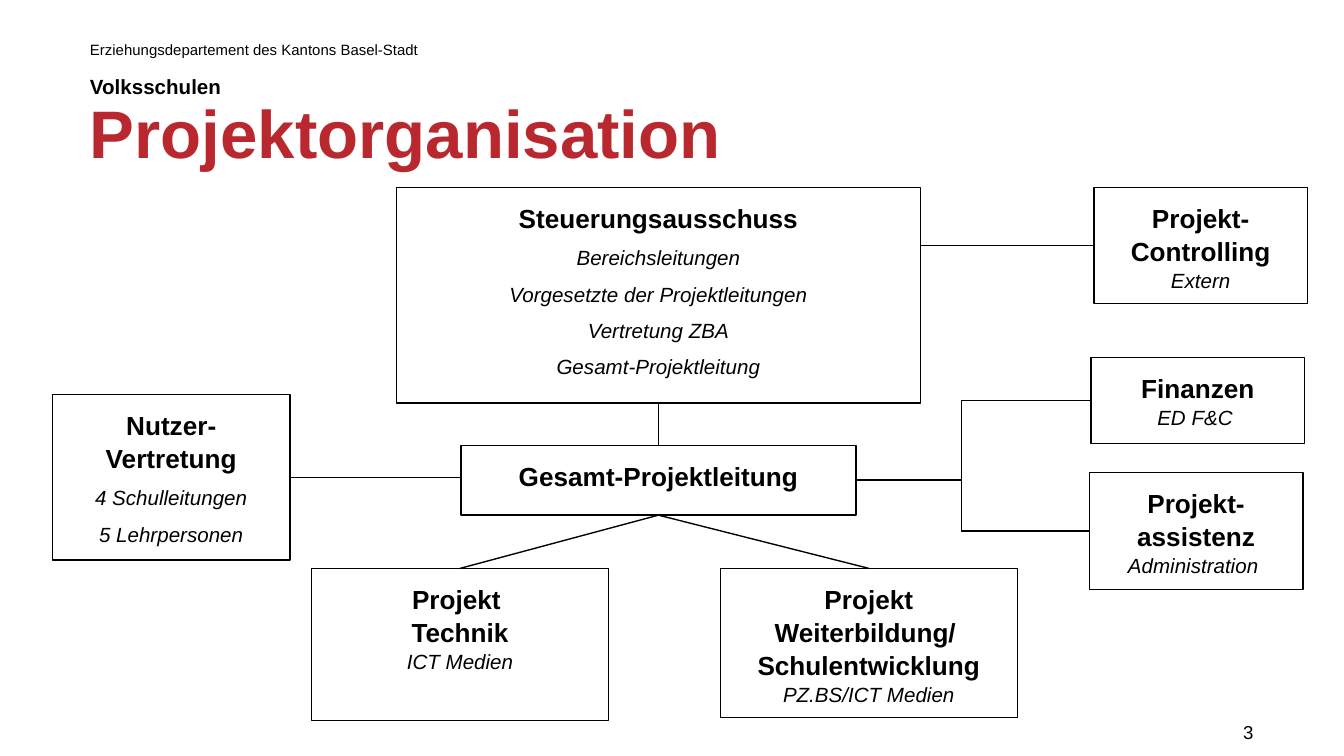
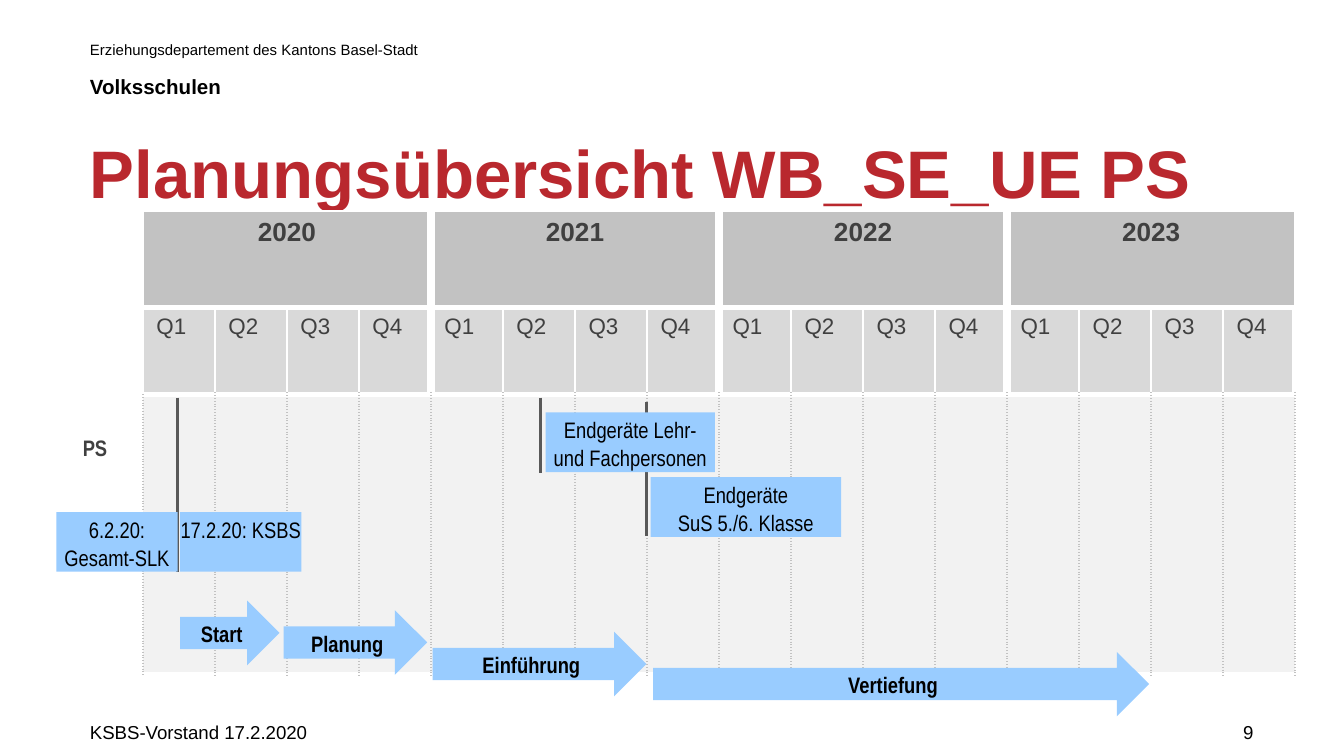
from copy import deepcopy

from lxml import etree
from pptx import Presentation
from pptx.dml.color import RGBColor
from pptx.enum import shapes, text
from pptx.oxml import ns
from pptx.util import Pt

COLORS = {
    "ink": "000000", "title": "B9282E", "bar": "99CCFF", "marker": "595959",
    "year": "C2C2C2", "quarter": "D9D9D9", "body": "F2F2F2",
    "table_ink": "404040", "white": "FFFFFF",
}
TOP, LEFT, BOTTOM, RIGHT = 0, 1, 2, 3
CENTER = text.PP_ALIGN.CENTER
RECT = shapes.MSO_SHAPE.RECTANGLE

HEAD = {"size": 14, "bold": True}
NOTE = {"size": 11, "italic": True}
BAR = {"size": 12, "name": "Arial Narrow"}


def rgb(key):
    return RGBColor.from_string(COLORS[key])


def style_run(run, fmt):
    values = {"name": "Arial", "bold": False, "italic": False, "color": "ink", **fmt}
    run.font.color.rgb = rgb(values.pop("color"))
    values["size"] = Pt(values["size"])
    for attribute, value in values.items():
        setattr(run.font, attribute, value)


def write(frame, paragraphs, **layout):
    """Fill a frame; each paragraph is a list of (text, format) runs."""
    for i, runs in enumerate(paragraphs):
        paragraph = frame.paragraphs[0] if i == 0 else frame.add_paragraph()
        for attribute, value in layout.items():
            if i or attribute != "space_before":
                setattr(paragraph, attribute, value)
        for content, fmt in runs:
            for n, line in enumerate(content.split("\n")):
                if n:
                    paragraph.add_line_break()
                    paragraph._p[-1].append(deepcopy(run._r.rPr))
                run = paragraph.add_run()
                run.text = line
                style_run(run, fmt)


def set_frame(frame, margins=(0, 0, 0, 0), anchor=text.MSO_ANCHOR.TOP):
    frame.word_wrap = True
    frame.vertical_anchor = anchor
    for side, value in zip(("left", "top", "right", "bottom"), margins):
        setattr(frame, f"margin_{side}", Pt(value))
    return frame


def add_text(slide, box, paragraphs, top=0, **layout):
    label = slide.shapes.add_textbox(*map(Pt, box))
    write(set_frame(label.text_frame, (0, top, 0, 0)), paragraphs,
          line_spacing=1.1, **layout)
    return label


def add_line(slide, start, end, color="ink", width=0.75):
    line = slide.shapes.add_connector(
        shapes.MSO_CONNECTOR.STRAIGHT, *map(Pt, (*start, *end)))
    line.line.color.rgb = rgb(color)
    line.line.width = Pt(width)
    etree.SubElement(line._element.spPr, ns.qn("a:effectLst"))
    return line


def add_frame(slide, title, title_top, number, footer=None):
    """Header, title, footer and page number."""
    header = add_text(slide, (48.2, 20.9, 317.5, 30), [
        [("Erziehungsdepartement des Kantons Basel-Stadt", {"size": 8})],
        [("Volksschulen", {"size": 11, "bold": True})],
    ])
    header.text_frame.paragraphs[0].space_after = Pt(7)
    add_text(slide, (48.2, title_top, 641, 40),
             [[(title, {"size": 36, "bold": True, "color": "title"})]])
    if footer:
        add_text(slide, (48.2, 383, 156, 21.5), [[(footer, {"size": 10})]], top=2)
    add_text(slide, (666, 383, 54, 21.5), [[(number, {"size": 10})]], top=2)


def add_node(slide, box, paragraphs):
    node = slide.shapes.add_shape(RECT, *map(Pt, box))
    node.shadow.inherit = False
    node.fill.background()
    node.line.color.rgb = rgb("ink")
    node.line.width = Pt(0.75)
    write(set_frame(node.text_frame, (7.2,) * 4), paragraphs,
          alignment=CENTER, line_spacing=1.05, space_before=Pt(5.5))
    return node


def org_chart(slide, box):
    x, y = box[:2]
    content = {
        "steering": ((184.5, 0, 280.5, 115.5), [
            [("Steuerungsausschuss", HEAD)],
            [("Bereichsleitungen", NOTE)],
            [("Vorgesetzte der Projektleitungen", NOTE)],
            [("Vertretung ZBA", NOTE)],
            [("Gesamt-Projektleitung", NOTE)]]),
        "lead": ((219, 138, 211.5, 37.5), [[("Gesamt-Projektleitung", HEAD)]]),
        "users": ((0, 111, 127.5, 88.5), [
            [("Nutzer-Vertretung", HEAD)],
            [("4 Schulleitungen", NOTE)],
            [("5 Lehrpersonen", NOTE)]]),
        "technology": ((139, 204, 159, 81.5), [
            [("Projekt \nTechnik\n", HEAD), ("ICT Medien", NOTE)]]),
        "training": ((358, 204, 159, 80), [
            [("Projekt\nWeiterbildung/ \nSchulentwicklung\n", HEAD),
             ("PZ.BS/ICT Medien", NOTE)]]),
        "controlling": ((558, 0, 114.5, 62), [
            [("Projekt-Controlling\n", HEAD), ("Extern", NOTE)]]),
        "finance": ((556.5, 91, 114.5, 46), [
            [("Finanzen\n", HEAD), ("ED F&C ", NOTE)]]),
        "assistant": ((555.5, 152.5, 114.5, 63), [
            [("Projekt-assistenz\n", HEAD), ("Administration ", NOTE)]]),
    }
    nodes = {key: add_node(slide, (x + dx, y + dy, w, h), paragraphs)
             for key, ((dx, dy, w, h), paragraphs) in content.items()}

    for upper, lower in (("steering", "lead"), ("lead", "technology"),
                         ("lead", "training")):
        line = add_line(slide, (x, y), (x, y))
        line.begin_connect(nodes[upper], BOTTOM)
        line.end_connect(nodes[lower], TOP)

    def middle(key):
        top, height = content[key][0][1::2]
        return y + top + height / 2

    bus = x + 487
    for key, start in (("controlling", x + 465), ("finance", bus), ("assistant", bus)):
        line = add_line(slide, (start, middle(key)), (start, middle(key)))
        line.end_connect(nodes[key], LEFT)
    for key, end in (("users", x + 219), ("lead", bus)):
        line = add_line(slide, (end, middle(key)), (end, middle(key)))
        line.begin_connect(nodes[key], RIGHT)
    add_line(slide, (bus, middle("finance")), (bus, middle("assistant")))


def set_borders(cell, **edges):
    """Each edge is (colour, width, dash), keyed L, R, T, B."""
    properties = cell._tc.get_or_add_tcPr()
    for side in "LRTB":
        color, width, dash = edges[side]
        line = etree.SubElement(properties, ns.qn(f"a:ln{side}"), w=str(Pt(width)))
        fill = etree.SubElement(line, ns.qn("a:solidFill"))
        etree.SubElement(fill, ns.qn("a:srgbClr"), val=COLORS[color])
        etree.SubElement(line, ns.qn("a:prstDash"), val=dash)


def style_cell(cell, row, column):
    def white(width):
        return ("white", width, "solid")

    def side(edge):
        """Border at the left edge of a column, counted from the first quarter."""
        if edge < 0:
            return white(1)
        if row == 2:
            return ("year", 1.5, "sysDot")
        return white(4.5 if edge % 4 == 0 and edge else 1.5)

    set_borders(cell, L=side(column - 1), R=side(column),
                T=white(3 if row and column else 1),
                B=white(3 if column else 1))
    if column:
        cell.fill.solid()
        cell.fill.fore_color.rgb = rgb(("year", "quarter", "body")[row])
    else:
        cell.fill.background()


def plan_table(slide, box):
    label_width, quarter_width = 51.4, 38.6
    table = slide.shapes.add_table(3, 17, *map(Pt, box)).table
    table.first_row = table.horz_banding = False
    for i, column in enumerate(table.columns):
        column.width = Pt(quarter_width if i else label_width)
    for row, height in zip(table.rows, (51.8, 46.8, 149.8)):
        row.height = Pt(height)
    for r in range(3):
        for c in range(17):
            style_cell(table.cell(r, c), r, c)
    for i, year in enumerate(("2020", "2021", "2022", "2023")):
        first = 1 + 4 * i
        cell = table.cell(0, first)
        cell.merge(table.cell(0, first + 3))
        write(cell.text_frame, [[(year, {**HEAD, "color": "table_ink"})]],
              alignment=CENTER)
        for q in range(4):
            write(table.cell(1, first + q).text_frame,
                  [[(f"Q{q + 1}", {"size": 12, "color": "table_ink"})]])
    level = table.cell(2, 0)
    level.margin_top = Pt(24)
    write(level.text_frame, [[("PS", {**BAR, "bold": True, "color": "table_ink"})]],
          alignment=CENTER)


def add_bar(slide, preset, box, paragraphs, anchor):
    bar = slide.shapes.add_shape(preset, *map(Pt, box))
    bar.shadow.inherit = False
    bar.fill.solid()
    bar.fill.fore_color.rgb = rgb("bar")
    bar.line.fill.background()
    write(set_frame(bar.text_frame, (0, 1.4, 0, 1.4), anchor), paragraphs,
          alignment=CENTER, line_spacing=1.05)


def milestones(slide, box):
    x, y = box[:2]
    for dx, top, bottom in ((69.8, 100.1, 193.7), (321.1, 102.3, 174.3),
                            (264.2, 100.1, 140.4)):
        add_line(slide, (x + dx, y + top), (x + dx, y + bottom), "marker", 1.5)
    for dx, dy, width, lines in (
            (5, 161.3, 65, ["6.2.20: Gesamt-SLK"]),
            (71.3, 161.3, 65, ["17.2.20: KSBS"]),
            (267.1, 108, 90.7, ["Endgeräte Lehr-\nund Fachpersonen"]),
            (323.3, 142.6, 102.2, ["Endgeräte", "SuS 5./6. Klasse"])):
        add_bar(slide, RECT, (x + dx, y + dy, width, 32),
                [[(line, BAR)] for line in lines], text.MSO_ANCHOR.TOP)


def phases(slide, box):
    x, y = box[:2]
    for dx, dy, width, phase in ((71.3, 208.8, 53.3, "Start"),
                                 (126.7, 213.9, 77, "Planung"),
                                 (206.6, 225.4, 114.5, "Einführung"),
                                 (324.7, 236.2, 265.7, "Vertiefung")):
        add_bar(slide, shapes.MSO_SHAPE.RIGHT_ARROW, (x + dx, y + dy, width, 34.6),
                [[(phase, {**BAR, "bold": True})]], text.MSO_ANCHOR.MIDDLE)


def main():
    deck = Presentation()
    deck.slide_width, deck.slide_height = Pt(720), Pt(405)
    blank = deck.slide_layouts[6]

    organisation = deck.slides.add_slide(blank)
    add_frame(organisation, "Projektorganisation", 44.6, "3")
    org_chart(organisation, (28, 100.5, 672.5, 285.5))

    planning = deck.slides.add_slide(blank)
    add_frame(planning, "Planungsübersicht WB_SE_UE PS", 66.2, "9",
              "KSBS-Vorstand 17.2.2020")
    schedule = (25.2, 113, 669, 248.4)
    for region in (plan_table, milestones, phases):
        region(planning, schedule)

    deck.save("out.pptx")


if __name__ == "__main__":
    main()
